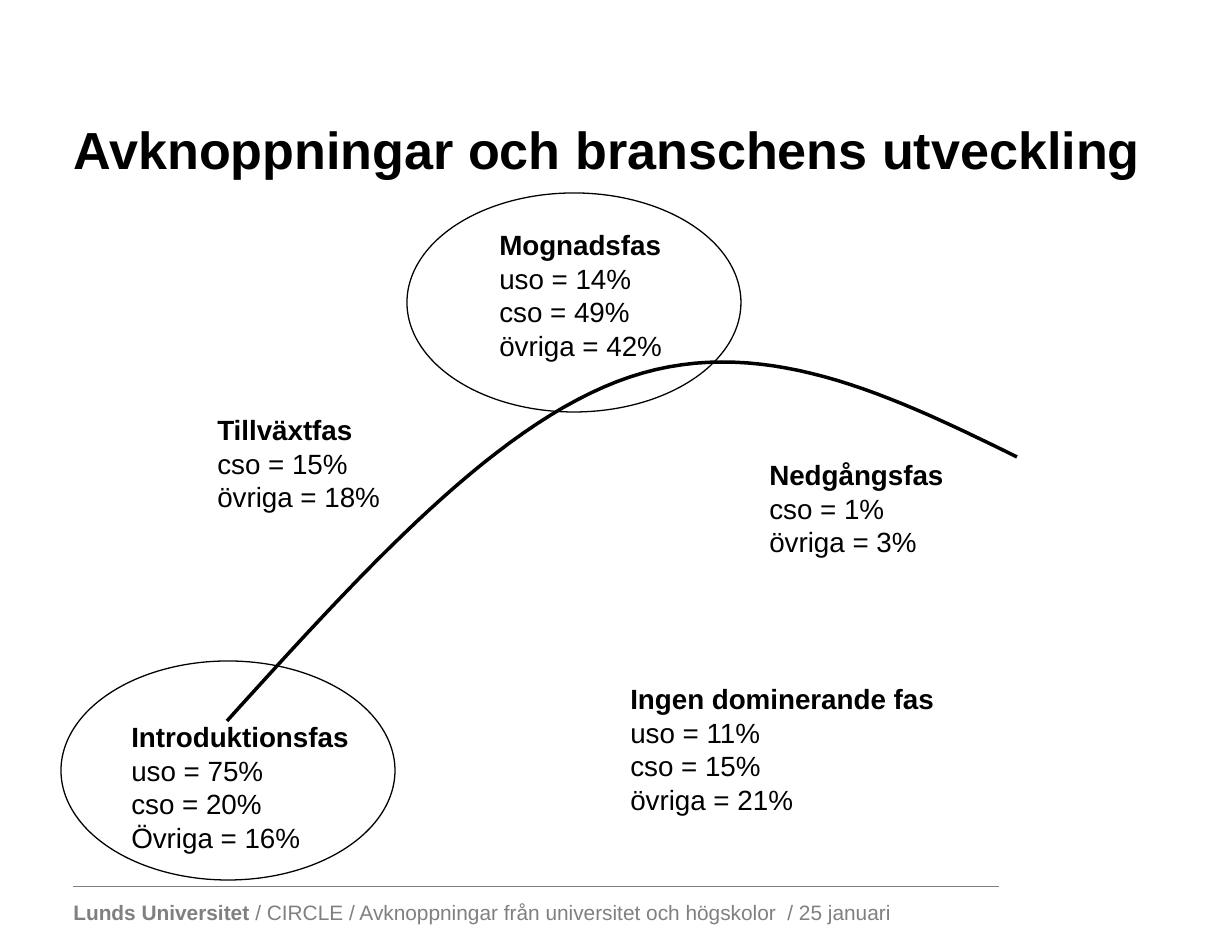
from dataclasses import dataclass

from lxml.etree import SubElement
from pptx import Presentation
from pptx.dml.color import RGBColor
from pptx.enum.shapes import MSO_CONNECTOR as Connector, MSO_SHAPE as Shape
from pptx.enum.text import MSO_ANCHOR as Anchor, MSO_AUTO_SIZE as AutoSize, PP_ALIGN as Align
from pptx.oxml.ns import qn
from pptx.util import Pt

EMU_PER_PX = 914400 / 125.2
CURVE_STEPS = 30


def px(length):
    return round(length * EMU_PER_PX)


@dataclass(frozen=True)
class Theme:
    font: str = "Arial"
    ink: RGBColor = RGBColor(0, 0, 0)
    muted: RGBColor = RGBColor(0x80, 0x80, 0x80)
    title_size: float = 30
    body_size: float = 16
    footer_size: float = 12
    curve_width: float = 2
    ring_width: float = 0.75
    rule_width: float = 0.5


def bezier_point(controls, t):
    weights = ((1 - t) ** 3, 3 * t * (1 - t) ** 2, 3 * t**2 * (1 - t), t**3)
    return tuple(
        px(sum(weight * point[axis] for weight, point in zip(weights, controls)))
        for axis in (0, 1)
    )


class SlideBuilder:
    def __init__(self, page, theme):
        self.page = page
        self.theme = theme

    def style_font(self, font, size, color, bold=False):
        font.name = self.theme.font
        font.size = Pt(size)
        font.color.rgb = color
        font.bold = bold

    def style_line(self, line, color, width):
        line.color.rgb = color
        line.width = Pt(width)

    def title(self, text, left, top, width, height):
        box = self.page.shapes.title
        box.left, box.top, box.width, box.height = map(px, (left, top, width, height))
        frame = box.text_frame
        frame.text = text
        frame.auto_size = AutoSize.NONE
        frame.vertical_anchor = Anchor.MIDDLE
        para = frame.paragraphs[0]
        para.alignment = Align.LEFT
        self.style_font(para.font, self.theme.title_size, self.theme.ink, bold=True)

    def text_box(self, left, top, width, height):
        box = self.page.shapes.add_textbox(*map(px, (left, top, width, height)))
        box.text_frame.word_wrap = True
        return box.text_frame

    def phase(self, name, shares, left, top, width, height):
        frame = self.text_box(left, top, width, height)
        frame.text = "\n".join([name, *shares])
        for index, para in enumerate(frame.paragraphs):
            self.style_font(para.font, self.theme.body_size, self.theme.ink, bold=index == 0)

    def footer(self, sender, details, left, top, width, height):
        para = self.text_box(left, top, width, height).paragraphs[0]
        self.style_font(para.font, self.theme.footer_size, self.theme.muted)
        for text, bold in ((sender, True), (details, False)):
            span = para.add_run()
            span.text = text
            span.font.bold = bold

    def rule(self, left, right, y):
        line = self.page.shapes.add_connector(
            Connector.STRAIGHT, px(left), px(y), px(right), px(y)
        )
        SubElement(line._element.spPr, qn("a:effectLst"))
        self.style_line(line.line, self.theme.muted, self.theme.rule_width)

    def ring(self, left, top, width, height):
        ring = self.page.shapes.add_shape(Shape.OVAL, *map(px, (left, top, width, height)))
        ring.shadow.inherit = False
        ring.fill.background()
        self.style_line(ring.line, self.theme.ink, self.theme.ring_width)

    def curve(self, segments):
        points = [
            bezier_point(controls, step / CURVE_STEPS)
            for controls in segments
            for step in range(1, CURVE_STEPS + 1)
        ]
        start = bezier_point(segments[0], 0)
        builder = self.page.shapes.build_freeform(*start)
        builder.add_line_segments(points, close=False)
        curve = builder.convert_to_shape()
        curve.shadow.inherit = False
        curve.fill.background()
        self.style_line(curve.line, self.theme.ink, self.theme.curve_width)


PHASES = [
    ("Introduktionsfas", ["uso = 75%", "cso = 20%", "Övriga = 16%"], (119, 714, 275, 148)),
    ("Tillväxtfas", ["cso = 15%", "övriga = 18%"], (205, 407, 200, 114)),
    ("Mognadsfas", ["uso = 14%", "cso = 49%", "övriga = 42%"], (487, 222, 200, 148)),
    ("Nedgångsfas", ["cso = 1%", "övriga = 3%"], (757, 452, 210, 114)),
    ("Ingen dominerande fas", ["uso = 11%", "cso = 15%", "övriga = 21%"], (618, 676, 340, 148)),
]
LIFE_CYCLE = [
    [(227, 721), (363, 571), (498, 421), (630, 377)],
    [(630, 377), (761, 333), (889, 394), (1017, 457)],
]
RING_SIZE = (334, 219)
RING_CORNERS = [(61, 661), (407, 193)]


def main():
    deck = Presentation()
    deck.slide_width, deck.slide_height = px(1232), px(936)
    page = deck.slides.add_slide(deck.slide_layouts.get_by_name("Title Only"))
    builder = SlideBuilder(page, Theme())

    builder.footer(
        "Lunds Universitet",
        " / CIRCLE / Avknoppningar från universitet och högskolor  / 25 januari",
        61, 893, 860, 38,
    )
    builder.rule(73, 999, 886)
    builder.title("Avknoppningar och branschens utveckling", 61, 70, 1109, 157)
    builder.curve(LIFE_CYCLE)
    for name, shares, bounds in PHASES:
        builder.phase(name, shares, *bounds)
    for corner in RING_CORNERS:
        builder.ring(*corner, *RING_SIZE)

    deck.save("out.pptx")


if __name__ == "__main__":
    main()
